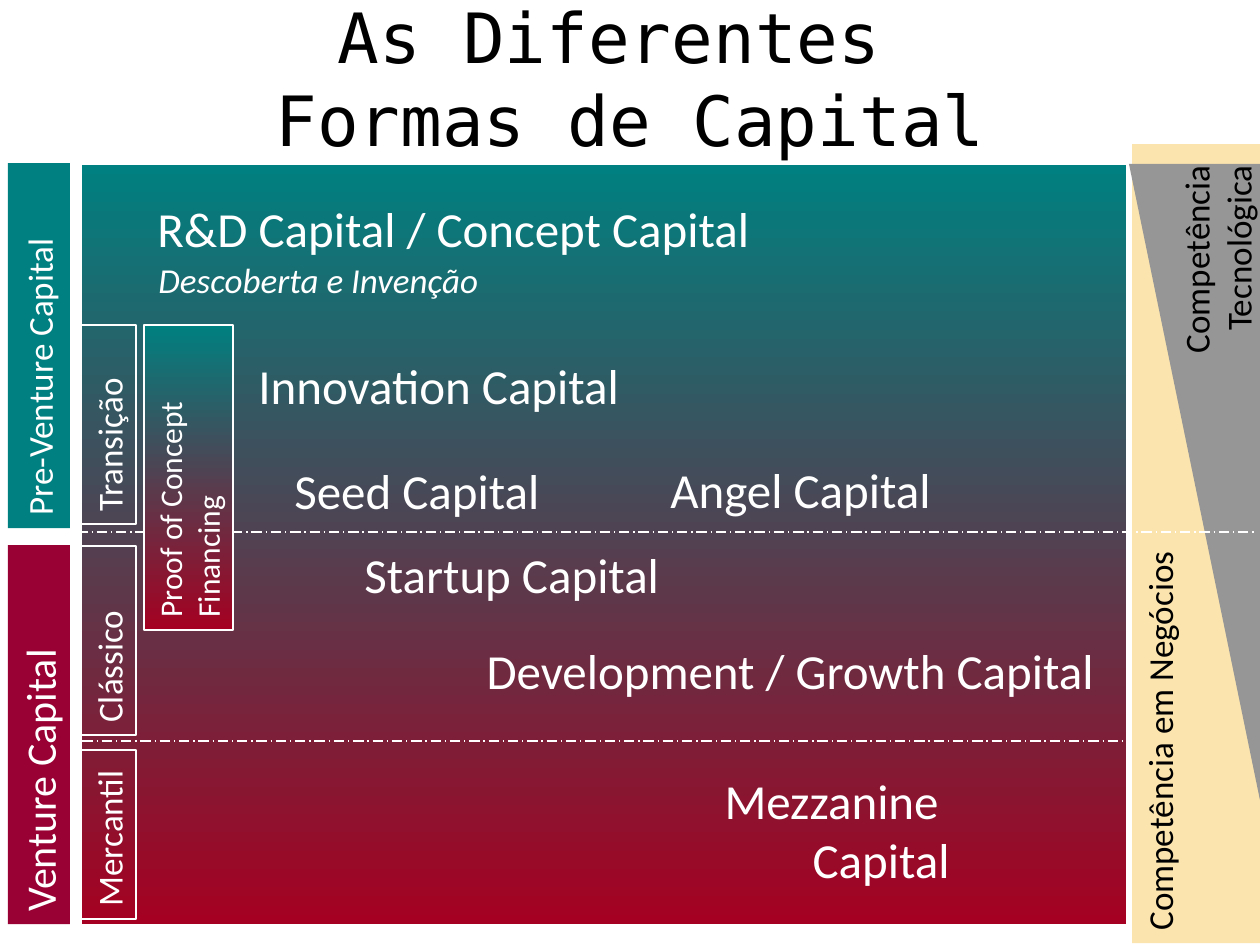
from dataclasses import dataclass

from lxml import etree
from pptx import Presentation
from pptx import util as u
from pptx.dml.color import RGBColor
from pptx.enum import dml, shapes, text
from pptx.oxml.ns import qn

PX = 914400 / 126
MID, TOP = text.MSO_ANCHOR.MIDDLE, text.MSO_ANCHOR.TOP
LEFT, RIGHT = text.PP_ALIGN.LEFT, text.PP_ALIGN.RIGHT


@dataclass(frozen=True)
class Theme:
    teal: str = "008080"
    red: str = "A50021"
    wine: str = "990033"
    sand: str = "FBE4AE"
    gray: str = "969696"
    white: str = "FFFFFF"
    black: str = "000000"
    font: str = "Calibri"
    mono: str = "DejaVu Sans Mono"
    title: float = 39.6
    large: int = 28
    mid: int = 24
    body: int = 20
    small: int = 18
    line: float = 0.75


T = Theme()


def rgb(color):
    return RGBColor.from_string(color)


def emu(*vals):
    return [u.Emu(round(v * PX)) for v in vals]


def style(run, size, color, name=T.font, italic=False):
    vals = {"size": u.Pt(size), "name": name, "italic": italic}
    for key, val in vals.items():
        setattr(run.font, key, val)
    run.font.color.rgb = rgb(color)


def cast(run):
    """Put a hard black shadow behind the letters."""
    glow = etree.Element(qn("a:effectLst"))
    drop = etree.SubElement(glow, qn("a:outerShdw"), dist="35921", dir="2700000")
    etree.SubElement(drop, qn("a:srgbClr"), val=T.black)
    run.font._element.find(qn("a:solidFill")).addnext(glow)


def write(shape, words, size, color=T.white, align=LEFT, anchor=MID,
          italic=False, shadow=False):
    frame = shape.text_frame
    vals = {"word_wrap": True, "vertical_anchor": anchor,
            "auto_size": text.MSO_AUTO_SIZE.NONE, "text": words}
    for key, val in vals.items():
        setattr(frame, key, val)
    for para in frame.paragraphs:
        para.alignment = align
        for run in para.runs:
            style(run, size, color, italic=italic)
            if shadow:
                cast(run)


def paint(shape, fill, edge):
    """Fill with nothing, one colour, or a pair from top to bottom."""
    shape.shadow.inherit = False
    if fill is None:
        shape.fill.background()
    elif isinstance(fill, tuple):
        shape.fill.gradient()
        shape.fill.gradient_angle = 270
        for stop, color, pos in zip(shape.fill.gradient_stops, fill, (0, 1)):
            stop.color.rgb = rgb(color)
            stop.position = pos
        grad = shape._element.spPr.find(qn("a:gradFill"))
        grad.set("rotWithShape", "0")
    else:
        shape.fill.solid()
        shape.fill.fore_color.rgb = rgb(fill)
    if edge:
        shape.line.color.rgb = rgb(edge)
        shape.line.width = u.Pt(T.line)
    else:
        shape.line.fill.background()


def block(slide, box, fill=None, edge=None, kind=shapes.MSO_SHAPE.RECTANGLE):
    shape = slide.shapes.add_shape(kind, *emu(*box))
    paint(shape, fill, edge)
    return shape


def turn(box):
    """Give the unturned box that fills this one after a quarter turn."""
    x, y, w, h = box
    return x + (w - h) / 2, y + (h - w) / 2, h, w


def band(slide, box, words, size=T.body, fill=None, edge=None, **opts):
    """Draw a box whose text reads upward."""
    shape = block(slide, turn(box), fill, edge)
    shape.rotation = 270
    write(shape, words, size, **opts)


def label(slide, box, words, size=T.large, **opts):
    write(slide.shapes.add_textbox(*emu(*box)), words, size, **opts)


def rule(slide, x, end, y):
    line = slide.shapes.add_connector(
        shapes.MSO_CONNECTOR.STRAIGHT, *emu(x, y, end, y))
    line.line.color.rgb = rgb(T.white)
    line.line.width = u.Pt(T.line)
    line.line.dash_style = dml.MSO_LINE.LONG_DASH_DOT
    etree.SubElement(line._element.spPr, qn("a:effectLst"))


def head(slide, words):
    shape = slide.shapes.title
    spots = zip(("left", "top", "width", "height"), emu(0, 0, 1260, 155))
    for key, val in spots:
        setattr(shape, key, val)
    write(shape, words, T.title, align=text.PP_ALIGN.CENTER)
    for run in shape.text_frame.paragraphs[0].runs:
        style(run, T.title, T.black, T.mono)


def main():
    deck = Presentation()
    deck.slide_width, deck.slide_height = emu(1260, 945)
    slide = deck.slides.add_slide(deck.slide_layouts[5])
    fade = (T.teal, T.red)

    head(slide, "As Diferentes \vFormas de Capital")
    block(slide, (82, 165, 1044, 759), fade)
    rule(slide, 5, 1260, 741)

    band(slide, (8, 163, 62, 365), "Pre-Venture Capital", fill=T.teal)
    band(slide, (8, 545, 62, 379), "Venture Capital", T.mid, T.wine)
    for y, h, words in ((325, 199, "Transição"), (546, 189, "Clássico"),
                        (750, 169, "Mercantil")):
        band(slide, (81, y, 55, h), words, edge=T.white)

    label(slide, (145, 192, 723, 72), "R&D Capital / Concept Capital")
    label(slide, (146, 252, 386, 54), "Descoberta e Invenção", T.body,
          anchor=TOP, italic=True)
    for box, words, align in (
            ((246, 349, 547, 72), "Innovation Capital", LEFT),
            ((282, 454, 320, 72), "Seed Capital", LEFT),
            ((658, 453, 339, 72), "Angel Capital", LEFT),
            ((352, 538, 374, 72), "Startup Capital", LEFT),
            ((382, 634, 724, 72), "Development / Growth Capital", RIGHT),
            ((677, 764, 285, 130), "Mezzanine \nCapital", RIGHT)):
        label(slide, box, words, align=align, shadow=True)

    band(slide, (1132, 144, 135, 799), "Competência em Negócios",
         fill=T.sand, color=T.black, anchor=TOP)
    wedge = block(slide, (1129, 164, 132, 641), T.gray,
                  kind=shapes.MSO_SHAPE.RIGHT_TRIANGLE)
    wedge.rotation = 180
    band(slide, (1168, 153, 97, 246), "Competência\nTecnológica",
         color=T.black, align=RIGHT)
    rule(slide, 0, 1255, 532)
    band(slide, (144, 325, 89, 305), "Proof of Concept Financing", T.small,
         fade, T.white)
    deck.save("out.pptx")


if __name__ == "__main__":
    main()
